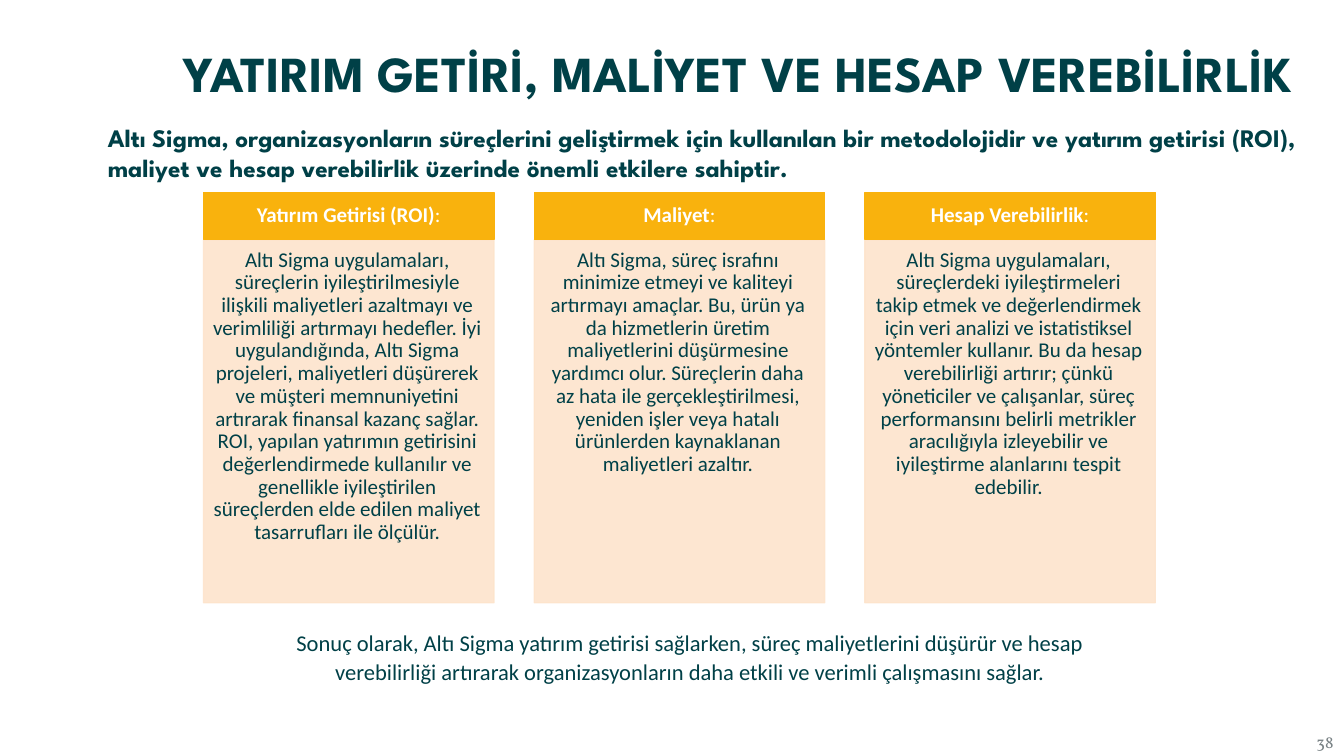
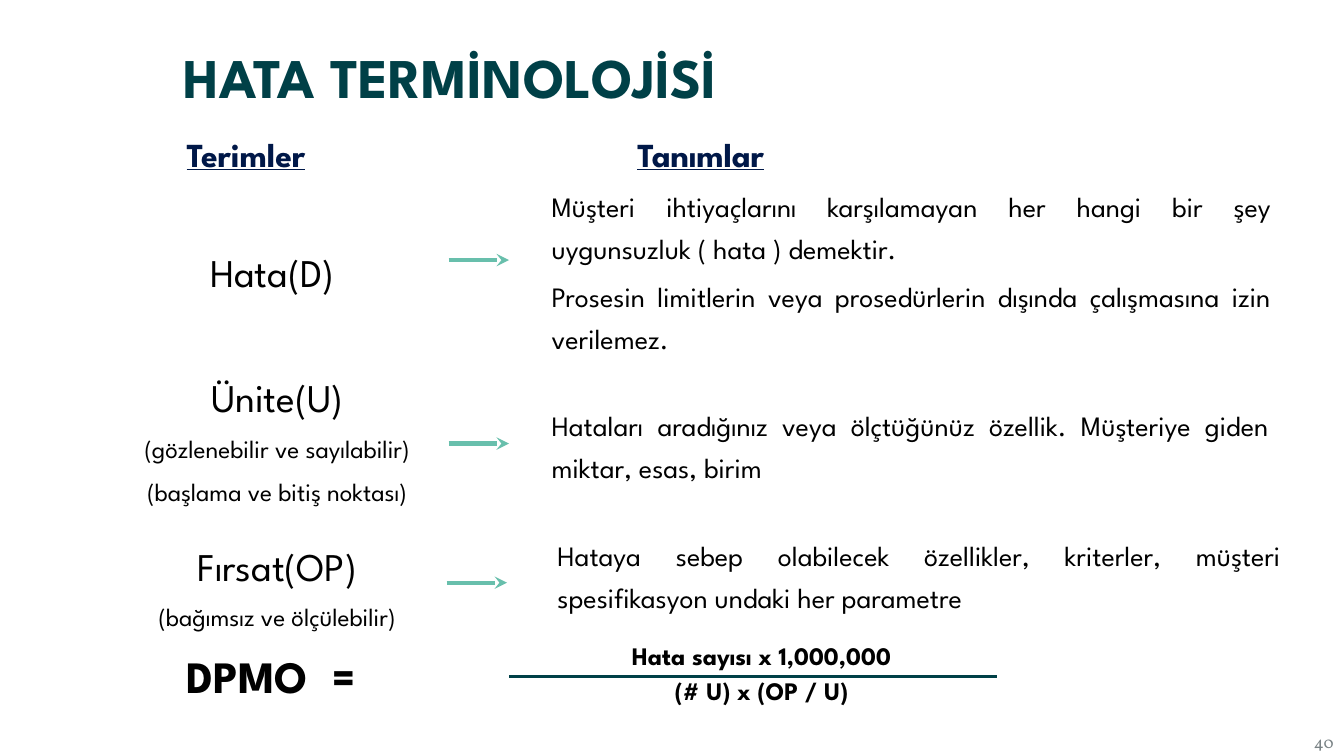
from dataclasses import dataclass

from lxml import etree
from pptx import Presentation
from pptx import util as u
from pptx.dml.color import RGBColor
from pptx.enum import shapes, text
from pptx.oxml.ns import qn


# Colours, fonts and type sizes
@dataclass(frozen=True)
class Theme:
    teal: str = "004047"
    navy: str = "001848"
    black: str = "000000"
    white: str = "FFFFFF"
    gray: str = "798285"
    amber: str = "F9B20D"
    peach: str = "FDE4CC"
    mint: str = "68BFAC"
    display: str = "League Spartan"
    plain: str = "Calibri"
    numeral: str = "Vollkorn"
    number: float = 12
    card: float = 15
    closing: float = 16.1
    small: float = 18
    definition: float = 20
    header: float = 24
    term: float = 28
    formula: float = 32


THEME = Theme()
ALIGN = text.PP_ALIGN
ANCHOR = text.MSO_ANCHOR
LOOSE = 1.25

COLUMNS = [
    ("Yatırım Getirisi (ROI)",
     "Altı Sigma uygulamaları, süreçlerin iyileştirilmesiyle ilişkili maliyetleri "
     "azaltmayı ve verimliliği artırmayı hedefler. İyi uygulandığında, Altı Sigma "
     "projeleri, maliyetleri düşürerek ve müşteri memnuniyetini artırarak finansal "
     "kazanç sağlar. ROI, yapılan yatırımın getirisini değerlendirmede kullanılır ve "
     "genellikle iyileştirilen süreçlerden elde edilen maliyet tasarrufları ile ölçülür."),
    ("Maliyet",
     "Altı Sigma, süreç israfını minimize etmeyi ve kaliteyi artırmayı amaçlar. Bu, "
     "ürün ya da hizmetlerin üretim maliyetlerini düşürmesine yardımcı olur. Süreçlerin "
     "daha az hata ile gerçekleştirilmesi, yeniden işler veya hatalı ürünlerden "
     "kaynaklanan maliyetleri azaltır."),
    ("Hesap Verebilirlik",
     "Altı Sigma uygulamaları, süreçlerdeki iyileştirmeleri takip etmek ve "
     "değerlendirmek için veri analizi ve istatistiksel yöntemler kullanır. Bu da hesap "
     "verebilirliği artırır; çünkü yöneticiler ve çalışanlar, süreç performansını belirli "
     "metrikler aracılığıyla izleyebilir ve iyileştirme alanlarını tespit edebilir."),
]

# Term box, term, notes, definition box, definitions, arrow start
TERMS = [
    ((46.8, 165.6, 295.2, 46), "Hata(D)", [],
     (386, 126, 530, 130),
     ["Müşteri ihtiyaçlarını karşılamayan her hangi bir şey uygunsuzluk ( hata ) demektir.",
      "Prosesin limitlerin veya prosedürlerin dışında çalışmasına izin verilemez."],
     (320.4, 185.8)),
    ((46.8, 254.9, 302.4, 110), "Ünite(U)",
     ["(gözlenebilir ve sayılabilir)", "(başlama ve bitiş noktası)"],
     (386, 282.2, 528.5, 65),
     ["Hataları aradığınız veya ölçtüğünüz özellik. Müşteriye giden miktar, esas, birim"],
     (320.4, 316.8)),
    ((46.8, 375.1, 302.4, 78.5), "Fırsat(OP)", ["(bağımsız ve ölçülebilir)"],
     (390.2, 375.1, 532.8, 65),
     ["Hataya sebep olabilecek özellikler, kriterler, müşteri spesifikasyon undaki her parametre"],
     (319, 416.2)),
]


# Shared helpers
def set_all(target, values):
    for name, value in values.items():
        setattr(target, name, value)


def run_of(words, size, color=THEME.black, font=THEME.display, **style):
    return words, color, dict(size=u.Pt(size), name=font, **style)


def place(shape, left, top, width, height):
    set_all(shape, {"left": u.Pt(left), "top": u.Pt(top),
                    "width": u.Pt(width), "height": u.Pt(height)})


def write(shape, paragraphs, align=ALIGN.LEFT, spacing=1.0, anchor=ANCHOR.TOP,
          insets=(7.2, 3.6, 7.2, 3.6), tab=None):
    """Fill a shape with paragraphs, each a list of runs."""
    frame = shape.text_frame
    left, top, right, bottom = map(u.Pt, insets)
    set_all(frame, {"word_wrap": True, "auto_size": text.MSO_AUTO_SIZE.NONE,
                    "vertical_anchor": anchor, "margin_left": left, "margin_top": top,
                    "margin_right": right, "margin_bottom": bottom})
    for index, runs in enumerate(paragraphs):
        paragraph = frame.add_paragraph() if index else frame.paragraphs[0]
        before = 0.2 * runs[0][2]["size"].pt if index else 0
        set_all(paragraph, {"alignment": align, "line_spacing": spacing,
                            "space_before": u.Pt(before), "space_after": u.Pt(0)})
        if tab:
            stops = etree.SubElement(paragraph._p.get_or_add_pPr(), qn("a:tabLst"))
            etree.SubElement(stops, qn("a:tab"), pos=str(u.Pt(tab)), algn="l")
        for words, color, style in runs:
            run = paragraph.add_run()
            run.text = words
            set_all(run.font, style)
            run.font.color.rgb = RGBColor.from_string(color)


def add_text(slide, box, paragraphs, **layout):
    write(slide.shapes.add_textbox(*map(u.Pt, box)), paragraphs, **layout)


def add_panel(slide, box, color, paragraphs, opacity=None, **layout):
    shape = slide.shapes.add_shape(shapes.MSO_SHAPE.RECTANGLE, *map(u.Pt, box))
    shape.shadow.inherit = False
    shape.fill.solid()
    shape.line.width = u.Pt(1)
    for paint in (shape.fill.fore_color, shape.line.color):
        paint.rgb = RGBColor.from_string(color)
    if opacity:
        for node in shape._element.spPr.iter(qn("a:srgbClr")):
            etree.SubElement(node, qn("a:alpha"), val=str(opacity * 1000))
    write(shape, paragraphs, **layout)


def add_line(slide, left, top, length, color, width, arrow=False):
    line = slide.shapes.add_connector(
        shapes.MSO_CONNECTOR.STRAIGHT, *map(u.Pt, (left, top, left + length, top)))
    line.line.width = u.Pt(width)
    line.line.color.rgb = RGBColor.from_string(color)
    if arrow:
        etree.SubElement(line.line._get_or_add_ln(), qn("a:tailEnd"), type="stealth")
    etree.SubElement(line._element.spPr, qn("a:effectLst"))


def add_slide(presentation, layout, title, title_size, number):
    slide = presentation.slides.add_slide(presentation.slide_layouts[layout])
    place(slide.shapes.title, 124, 26.6, 864, 50.4)
    write(slide.shapes.title, [[run_of(title, title_size, THEME.teal, bold=True)]])
    add_text(slide, (893.5, 518.4, 66.2, 22.3),
             [[run_of(number, THEME.number, THEME.gray, THEME.numeral)]],
             align=ALIGN.RIGHT, anchor=ANCHOR.MIDDLE)
    return slide


# Slides
def build_returns(presentation):
    slide = add_slide(presentation, 1, "YATIRIM GETİRİ, MALİYET VE HESAP VEREBİLİRLİK", 36, "38")

    # Introduction
    body = slide.placeholders[1]
    place(body, 69.8, 83.5, 864, 385.2)
    write(body, [[run_of(
        "Altı Sigma, organizasyonların süreçlerini geliştirmek için kullanılan bir "
        "metodolojidir ve yatırım getirisi (ROI), maliyet ve hesap verebilirlik üzerinde "
        "önemli etkilere sahiptir.", THEME.small, THEME.teal, bold=True)]])
    properties = body.text_frame.paragraphs[0]._p.get_or_add_pPr()
    properties.set("marL", "0")
    properties.set("indent", "0")
    etree.SubElement(properties, qn("a:buNone"))

    # Three columns
    left, step, width = 145.4, 236.2, 207.4
    for index, (heading, detail) in enumerate(COLUMNS):
        x = left + index * step
        add_panel(slide, (x, 171.4, width, 259.2), THEME.peach,
                  [[run_of(detail, THEME.card, THEME.teal, THEME.plain)]],
                  opacity=90, align=ALIGN.CENTER, spacing=0.9, insets=(6.5, 6.5, 8.6, 9.4))
        add_panel(slide, (x, 137.5, width, 33.8), THEME.amber,
                  [[run_of(heading, THEME.card, THEME.white, THEME.plain, bold=True),
                    run_of(":", THEME.card, THEME.white, THEME.plain)]],
                  align=ALIGN.CENTER, spacing=0.9, anchor=ANCHOR.MIDDLE,
                  insets=(8.6, 5, 8.6, 5))

    # Conclusion
    add_text(slide, (190.8, 444.2, 603.4, 48.2), [[run_of(
        "Sonuç olarak, Altı Sigma yatırım getirisi sağlarken, süreç maliyetlerini düşürür "
        "ve hesap verebilirliği artırarak organizasyonların daha etkili ve verimli "
        "çalışmasını sağlar.", THEME.closing, THEME.teal, THEME.plain)]],
        align=ALIGN.CENTER, spacing=1.07)


def build_terms(presentation):
    slide = add_slide(presentation, 5, "HATA TERMİNOLOJİSİ", 40, "40")
    insets = (8, 3.6, 8, 3.6)

    # Column headings
    heading = dict(size=THEME.header, color=THEME.navy)
    add_text(slide, (125.3, 92.2, 778.3, 38.2),
             [[run_of("Terimler", bold=True, underline=True, **heading),
               run_of("\t", **heading),
               run_of("Tanımlar", bold=True, underline=True, **heading)]],
             insets=insets, tab=322)

    # Terms, arrows and definitions
    for term_box, term, notes, definition_box, definitions, (x, y) in TERMS:
        add_text(slide, term_box,
                 [[run_of(term, THEME.term)]] + [[run_of(note, THEME.small)] for note in notes],
                 align=ALIGN.CENTER, spacing=LOOSE, insets=insets)
        add_line(slide, x, y, 43.2, THEME.mint, 3, arrow=True)
        add_text(slide, definition_box,
                 [[run_of(words, THEME.definition)] for words in definitions],
                 align=ALIGN.JUSTIFY, spacing=LOOSE, insets=insets)

    # Formula
    add_text(slide, (125.3, 460, 199.4, 46.8),
             [[run_of("DPMO\t=", THEME.formula, bold=True)]], insets=insets, tab=104)
    add_text(slide, (409.7, 453.6, 268.6, 55.4),
             [[run_of(words, THEME.small, bold=True)]
              for words in ("Hata sayısı x 1,000,000", "(# U) x (OP / U)")],
             align=ALIGN.CENTER, insets=insets)
    add_line(slide, 363.6, 483.1, 348.5, THEME.teal, 2)


def main():
    presentation = Presentation()
    set_all(presentation, {"slide_width": u.Pt(960), "slide_height": u.Pt(540)})
    build_returns(presentation)
    build_terms(presentation)
    presentation.save("out.pptx")


if __name__ == "__main__":
    main()
